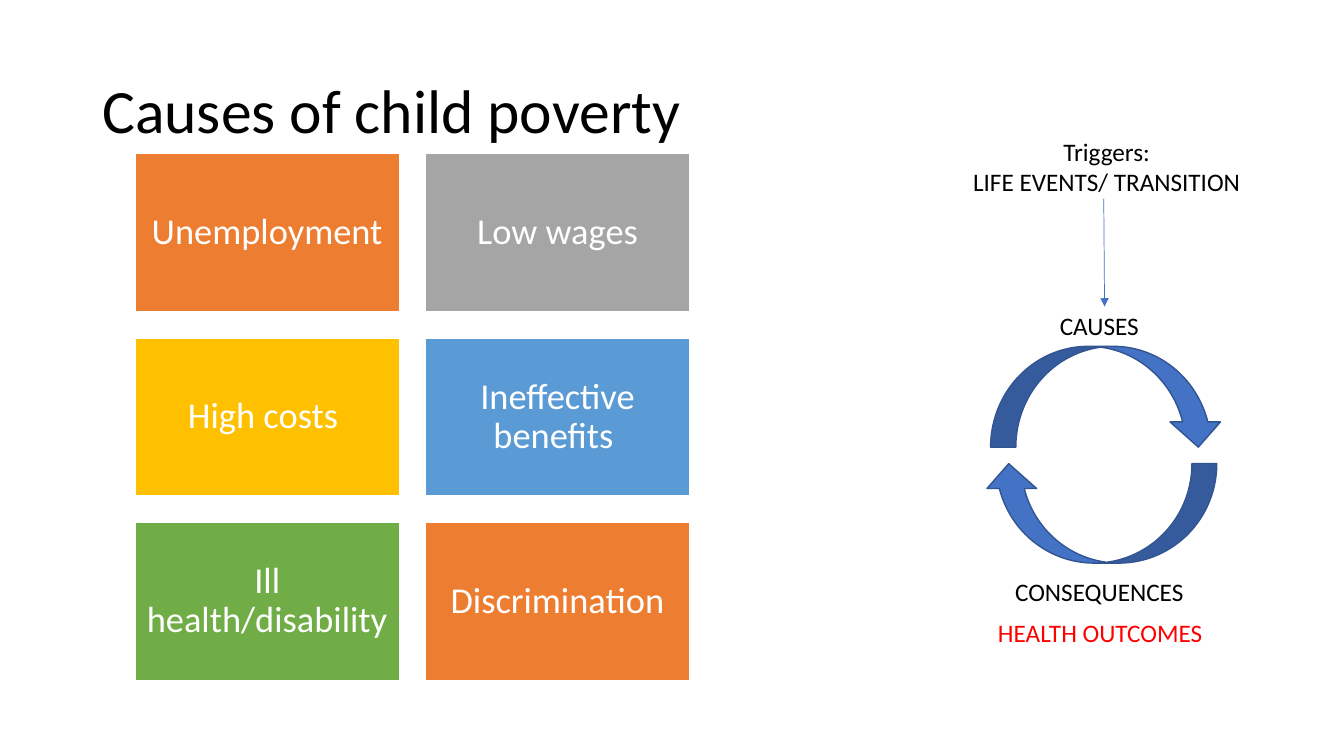
from lxml.etree import SubElement
from pptx import Presentation
from pptx.dml.color import RGBColor
from pptx.enum.shapes import MSO_CONNECTOR, MSO_SHAPE
from pptx.enum.text import MSO_ANCHOR, PP_ALIGN
from pptx.oxml.ns import qn
from pptx.util import Pt

BLACK = RGBColor(0x00, 0x00, 0x00)
WHITE = RGBColor(0xFF, 0xFF, 0xFF)
RED = RGBColor(0xFF, 0x00, 0x00)
ORANGE = RGBColor(0xED, 0x7D, 0x31)
GREY = RGBColor(0xA5, 0xA5, 0xA5)
GOLD = RGBColor(0xFF, 0xC0, 0x00)
SKY = RGBColor(0x5B, 0x9B, 0xD5)
GREEN = RGBColor(0x70, 0xAD, 0x47)
BLUE = RGBColor(0x44, 0x72, 0xC4)
NAVY = RGBColor(0x32, 0x54, 0x91)

CAUSES = [
    ("Unemployment", ORANGE),
    ("Low wages", GREY),
    ("High costs ", GOLD),
    ("Ineffective benefits ", SKY),
    ("Ill health/disability", GREEN),
    ("Discrimination", ORANGE),
]


class PovertySlide:
    """Holds the text style and the slide being drawn."""

    def __init__(self, slide, font="Calibri"):
        self.shapes = slide.shapes
        self.font = font

    def set_text(self, frame, lines, size, color, align=PP_ALIGN.CENTER, spacing=1.0):
        frame.word_wrap = True
        for number, line in enumerate(lines):
            paragraph = frame.add_paragraph() if number else frame.paragraphs[0]
            paragraph.text = line
            paragraph.alignment = align
            paragraph.line_spacing = spacing
            paragraph.font.name = self.font
            paragraph.font.size = Pt(size)
            paragraph.font.color.rgb = color

    def title(self, left, top, width, height, wording):
        frame = self.shapes.add_textbox(Pt(left), Pt(top), Pt(width), Pt(height)).text_frame
        frame.vertical_anchor = MSO_ANCHOR.MIDDLE
        self.set_text(frame, [wording], 44, BLACK, PP_ALIGN.LEFT, 0.9)

    def label(self, left, top, width, height, *lines, color=BLACK):
        frame = self.shapes.add_textbox(Pt(left), Pt(top), Pt(width), Pt(height)).text_frame
        self.set_text(frame, lines, 18, color)

    def block(self, preset, left, top, width, height, fill, outline):
        shape = self.shapes.add_shape(preset, Pt(left), Pt(top), Pt(width), Pt(height))
        shape.shadow.inherit = False
        shape.fill.solid()
        shape.fill.fore_color.rgb = fill
        shape.line.color.rgb = outline
        shape.line.width = Pt(1)
        return shape

    def tile(self, left, top, width, height, cause, fill):
        frame = self.block(MSO_SHAPE.RECTANGLE, left, top, width, height, fill, WHITE).text_frame
        frame.margin_left = frame.margin_right = Pt(7.8)
        frame.margin_top = frame.margin_bottom = Pt(7.8)
        frame.vertical_anchor = MSO_ANCHOR.MIDDLE
        self.set_text(frame, [cause], 26, WHITE, spacing=0.9)

    def cycle_arrow(self, preset, left, top, width, height, flipped=False):
        arrow = self.block(preset, left, top, width, height, BLUE, NAVY)
        if flipped:
            arrow.element.spPr.find(qn("a:xfrm")).set("flipH", "1")

    def trigger_arrow(self, x1, y1, x2, y2):
        arrow = self.shapes.add_connector(MSO_CONNECTOR.STRAIGHT, Pt(x1), Pt(y1), Pt(x2), Pt(y2))
        arrow.line.color.rgb = BLUE
        arrow.line.width = Pt(0.5)
        properties = arrow.element.spPr
        SubElement(properties.find(qn("a:ln")), qn("a:tailEnd"), type="triangle")
        SubElement(properties, qn("a:effectLst"))


def main():
    presentation = Presentation()
    presentation.slide_width, presentation.slide_height = Pt(960), Pt(540)
    poverty = PovertySlide(presentation.slides.add_slide(presentation.slide_layouts[6]))

    poverty.title(66, 28.8, 828, 104.4, "Causes of child poverty")
    for index, (cause, fill) in enumerate(CAUSES):
        row, column = divmod(index, 2)
        poverty.tile(96.6 + 207.4 * column, 109.6 + 131.8 * row, 188.6, 113, cause, fill)

    poverty.cycle_arrow(MSO_SHAPE.CURVED_DOWN_ARROW, 707.6, 247.4, 166.4, 72)
    poverty.cycle_arrow(MSO_SHAPE.CURVED_UP_ARROW, 702.8, 331.2, 166.4, 71, flipped=True)
    poverty.label(707, 218.4, 160.6, 29, "CAUSES ")
    poverty.label(707, 408.4, 160.6, 29, "CONSEQUENCES ")
    poverty.label(676, 93.8, 229, 51, "Triggers:", "LIFE EVENTS/ TRANSITION")
    poverty.trigger_arrow(788.4, 141.8, 789, 219)
    poverty.label(704, 437.4, 167.8, 29, "HEALTH OUTCOMES ", color=RED)

    presentation.save("out.pptx")


if __name__ == "__main__":
    main()
